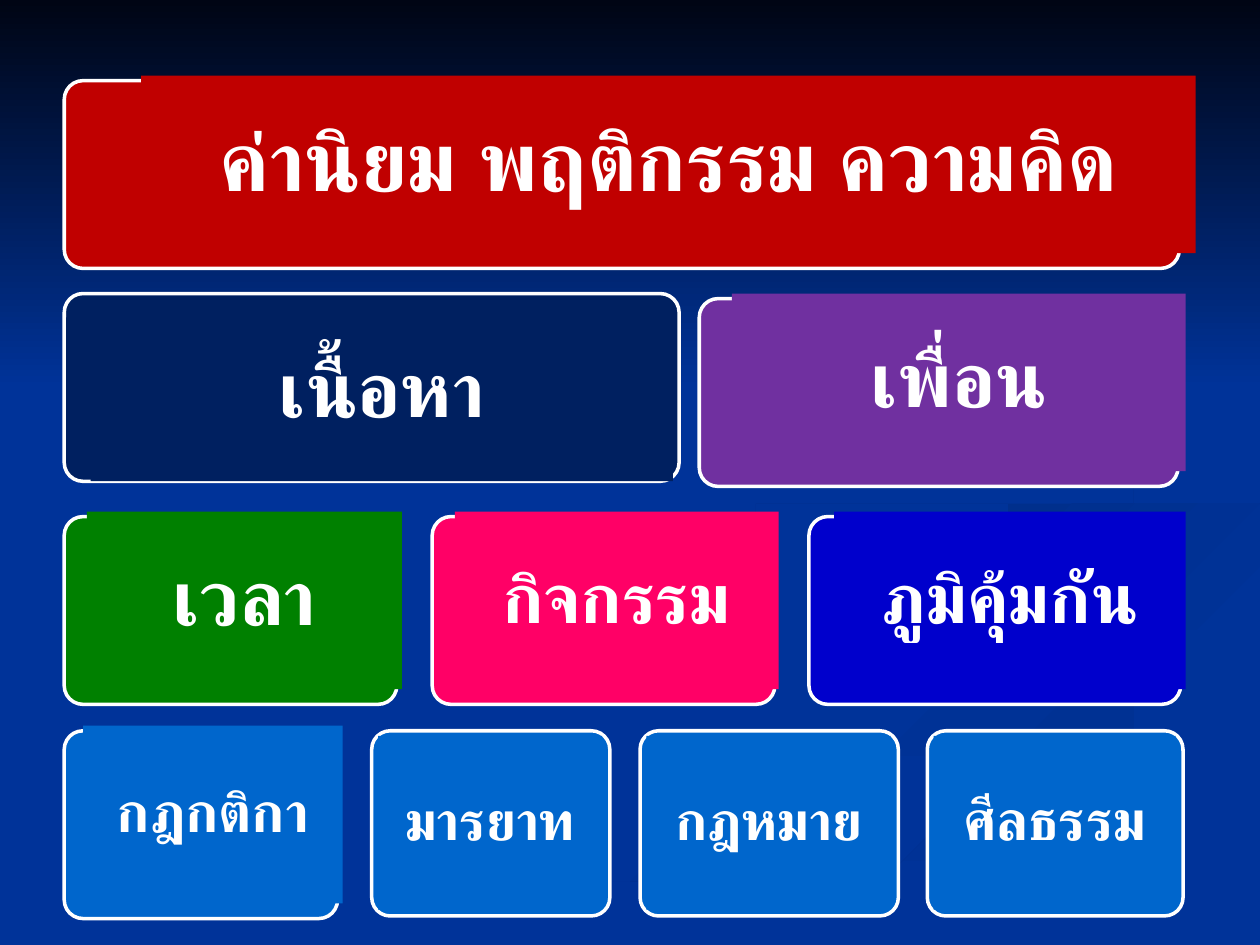
from dataclasses import dataclass

from lxml.etree import SubElement
from pptx import Presentation
from pptx.dml.color import RGBColor as RGB
from pptx.dml.fill import FillFormat
from pptx.enum.shapes import MSO_SHAPE as Shape
from pptx.enum.text import MSO_ANCHOR as Anchor, PP_ALIGN as Align
from pptx.oxml.ns import qn
from pptx.util import Inches, Pt


@dataclass(frozen=True)
class Theme:
    font: str = "Times New Roman"
    text: str = "FFFFFF"
    back: str = "003399"
    night: str = "000514"
    shade: str = "002F8C"
    dusk: str = "003193"
    red: str = "C00000"
    navy: str = "002060"
    purple: str = "7030A0"
    green: str = "008000"
    pink: str = "FF0066"
    blue: str = "0000CC"
    sky: str = "0066CC"
    heading: int = 48
    large: int = 44
    medium: int = 40
    small: int = 32
    smaller: int = 31
    border: int = 2


@dataclass(frozen=True)
class Box:
    left: float
    top: float
    width: float
    height: float


@dataclass(frozen=True)
class Panel:
    text: str
    fill: str
    size: int
    frame: Box
    label: Box


@dataclass(frozen=True)
class Ribbon:
    start: str
    end: str
    angle: int
    points: tuple


T = Theme()
ROW_1, ROW_2, ROW_3, ROW_4 = 0.64, 2.33, 4.1, 5.8
TALL, SHORT, LABEL_TALL, LABEL_SHORT = 1.49, 1.47, 1.41, 1.38
LIFT, DROP = 0.04, 0.04


def lifted(text: str, fill: str, size: int, top: float, left: float,
           width: float, label_left: float, label_width: float) -> Panel:
    return Panel(text, fill, size, Box(left, top, width, TALL),
                 Box(label_left, top - LIFT, label_width, LABEL_TALL))


def inset(text: str, size: int, left: float, width: float) -> Panel:
    return Panel(text, T.sky, size, Box(left, ROW_4, width, SHORT),
                 Box(left + 0.05, ROW_4 + DROP, width - 0.11, LABEL_SHORT))


PANELS = (
    inset("กฎหมาย", T.smaller, 5.08, 2.05),
    inset("มารยาท", T.smaller, 2.95, 1.89),
    lifted("กฎกติกา", T.sky, T.small, ROW_4, 0.51, 2.17, 0.66, 2.06),
    inset("ศีลธรรม", T.small, 7.36, 2.03),
    lifted("เวลา", T.green, T.large, ROW_3, 0.51, 2.64, 0.69, 2.5),
    lifted("เพื่อน", T.purple, T.large, ROW_2 + LIFT, 5.55, 3.8, 5.81, 3.6),
    lifted("กิจกรรม", T.pink, T.medium, ROW_3, 3.43, 2.72, 3.61, 2.57),
    Panel("เนื้อหา", T.navy, T.large, Box(0.51, ROW_2, 4.88, TALL),
          Box(0.72, 2.41, 4.62, LABEL_TALL)),
    lifted("ค่านิยม พฤติกรรม ความคิด", T.red, T.heading, ROW_1,
           0.51, 8.85, 1.12, 8.37),
    lifted("ภูมิคุ้มกัน", T.blue, T.medium, ROW_3, 6.42, 2.95, 6.62, 2.79),
)

RIBBONS = (
    Ribbon(T.back, T.dusk, 0, (
        (7.81, 5.53), (7.45, 5.38), (6.82, 5.19), (6.26, 5.02), (5.94, 4.85),
        (5.79, 4.73), (5.75, 4.59), (5.7, 4.72), (5.86, 4.87), (6.31, 5.05),
        (6.97, 5.25), (7.52, 5.43), (7.81, 5.56), (7.86, 5.66), (7.74, 5.83),
        (7.39, 5.98), (6.84, 6.13), (5.79, 6.39), (4.99, 6.61), (4.17, 6.9),
        (3.38, 7.27), (3, 7.49), (3.61, 7.49), (4.31, 7.14), (4.99, 6.87),
        (5.94, 6.56), (6.76, 6.34), (7.56, 6.14), (7.86, 6.01), (8, 5.81),
        (7.95, 5.67))),
    Ribbon(T.back, T.dusk, 45, (
        (9.43, 5.7), (9.3, 5.53), (9.05, 5.4), (8.5, 5.24), (7.92, 5.09),
        (7.45, 4.9), (7.24, 4.64), (7.3, 4.84), (7.55, 5.05), (7.97, 5.24),
        (8.54, 5.39), (9, 5.57), (9.18, 5.81), (9.07, 5.97), (8.94, 6.05),
        (9.25, 5.93), (9.41, 5.81))),
    Ribbon(T.shade, T.back, 90, (
        (5.03, 7.49), (5.71, 7.49), (6.14, 7.26), (6.7, 7.02), (7.52, 6.72),
        (8.61, 6.4), (9.98, 6.09), (9.98, 5.81), (9.63, 5.94), (9.03, 6.1),
        (7.64, 6.47), (6.62, 6.81), (5.99, 7.06), (5.43, 7.33), (5.19, 7.47))),
    Ribbon(T.shade, T.back, 45, (
        (7.81, 4.6), (7.86, 4.74), (8.06, 4.87), (8.26, 4.96), (8.09, 4.84),
        (8.05, 4.72), (8.16, 4.59), (8.43, 4.48), (8.96, 4.35), (9.54, 4.26),
        (9.98, 4.2), (9.98, 4.02), (9.33, 4.15), (8.65, 4.24), (8.1, 4.37))),
    Ribbon(T.shade, T.back, 45, (
        (6.83, 4.3), (7.64, 4.17), (8.25, 4.02), (8.67, 3.84), (8.89, 3.62),
        (8.94, 3.44), (8.86, 3.16), (8.64, 2.91), (8.21, 2.61), (7.62, 2.33),
        (8.26, 2.66), (8.62, 2.92), (8.85, 3.2), (8.86, 3.48), (8.61, 3.7),
        (8.18, 3.86), (7.33, 4.04), (6.49, 4.2), (5.97, 4.37), (5.77, 4.62),
        (5.9, 4.84), (6.22, 5), (6.01, 4.85), (5.93, 4.7), (6.06, 4.52),
        (6.35, 4.4))),
)


def paint_gradient(fill: FillFormat, start: str, end: str, angle: int) -> None:
    fill.gradient()
    fill.gradient_angle = -angle % 360
    for stop, color in zip(fill.gradient_stops, (start, end)):
        stop.color.rgb = RGB.from_string(color)


def add_ribbon(s, ribbon: Ribbon) -> None:
    first, *rest = ribbon.points
    builder = s.shapes.build_freeform(*first, scale=Inches(1))
    builder.add_line_segments(rest, close=True)
    sp = builder.convert_to_shape()
    sp.shadow.inherit = False
    sp.line.fill.background()
    paint_gradient(sp.fill, ribbon.start, ribbon.end, ribbon.angle)


def add_box(s, kind: Shape, box: Box):
    sp = s.shapes.add_shape(kind, Inches(box.left), Inches(box.top),
                            Inches(box.width), Inches(box.height))
    sp.shadow.inherit = False
    sp.line.fill.background()
    return sp


def add_panel(s, panel: Panel) -> None:
    frame = add_box(s, Shape.ROUNDED_RECTANGLE, panel.frame)
    frame.adjustments[0] = 0.1
    frame.line.color.rgb = RGB.from_string(T.text)
    frame.line.width = Pt(T.border)
    label = add_box(s, Shape.RECTANGLE, panel.label)
    for sp in (frame, label):
        sp.fill.solid()
        sp.fill.fore_color.rgb = RGB.from_string(panel.fill)
    tf = label.text_frame
    tf.word_wrap = True
    tf.vertical_anchor = Anchor.MIDDLE
    tf.margin_left = tf.margin_right = Inches(0.13)
    tf.margin_top = tf.margin_bottom = Inches(0.13)
    p = tf.paragraphs[0]
    p.alignment = Align.CENTER
    p.line_spacing = 0.9
    r = p.add_run()
    r.text = panel.text
    r.font.size = Pt(panel.size)
    r.font.bold = True
    r.font.color.rgb = RGB.from_string(T.text)
    r.font.name = T.font
    SubElement(r.font._element, qn("a:cs"), typeface=T.font)


def main() -> None:
    prs = Presentation()
    prs.slide_width, prs.slide_height = Inches(10), Inches(7.5)
    s = prs.slides.add_slide(prs.slide_layouts[6])
    s.background.fill.solid()
    s.background.fill.fore_color.rgb = RGB.from_string(T.back)
    for ribbon in RIBBONS:
        add_ribbon(s, ribbon)
    sky = add_box(s, Shape.RECTANGLE, Box(0, 0, 10, 3.08))
    paint_gradient(sky.fill, T.night, T.back, 90)
    for panel in PANELS:
        add_panel(s, panel)
    prs.save("out.pptx")


if __name__ == "__main__":
    main()
